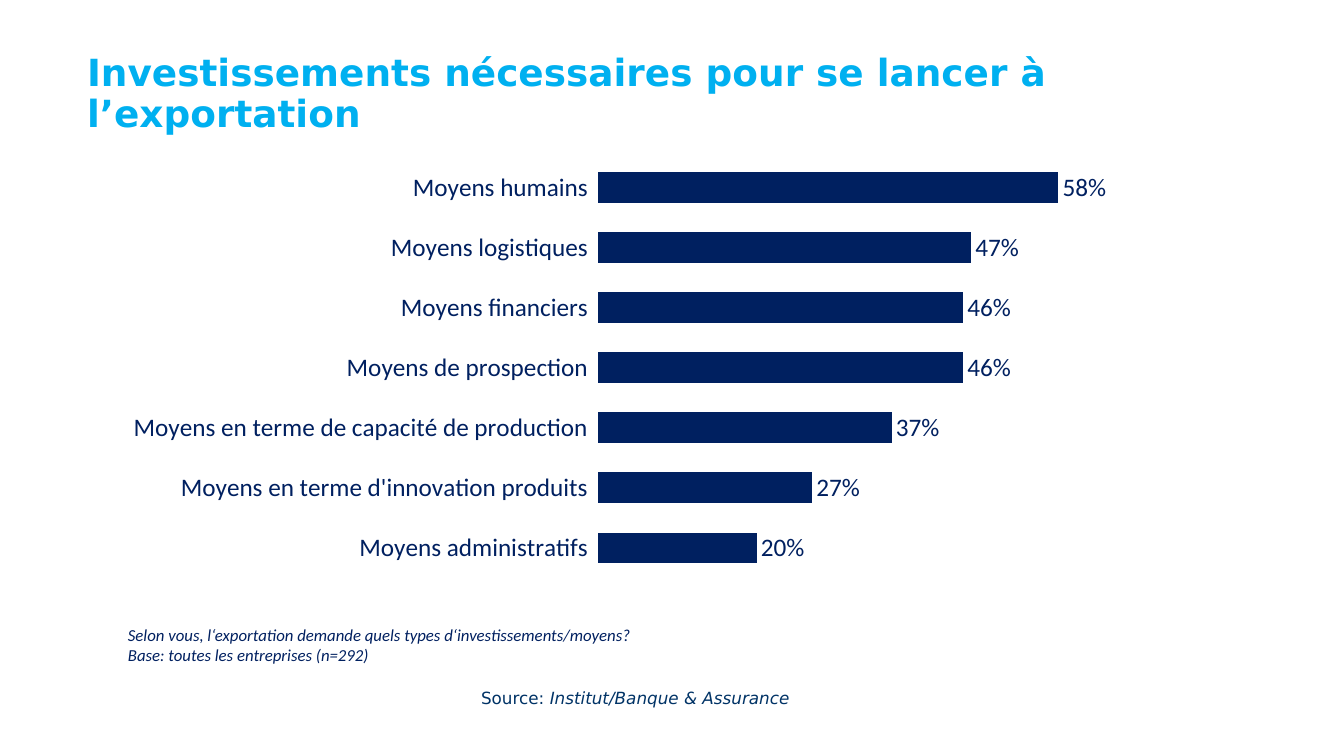
from lxml import etree
from pptx import Presentation
from pptx.chart.data import CategoryChartData
from pptx.dml.color import RGBColor
from pptx.enum.chart import XL_CHART_TYPE, XL_LABEL_POSITION, XL_TICK_LABEL_POSITION, XL_TICK_MARK
from pptx.enum.text import MSO_ANCHOR, MSO_AUTO_SIZE, PP_ALIGN
from pptx.oxml.ns import qn
from pptx.util import Pt

BAR_STACKED = XL_CHART_TYPE.BAR_STACKED
INSIDE_END = XL_LABEL_POSITION.INSIDE_END
LABELS_LOW = XL_TICK_LABEL_POSITION.LOW
NO_TICK = XL_TICK_MARK.NONE
MIDDLE, TOP = MSO_ANCHOR.MIDDLE, MSO_ANCHOR.TOP
NO_AUTOFIT = MSO_AUTO_SIZE.NONE
LEFT, CENTER = PP_ALIGN.LEFT, PP_ALIGN.CENTER

SKY = RGBColor(0x00, 0xB0, 0xF0)
NAVY = RGBColor(0x00, 0x20, 0x60)
SOURCE_BLUE = RGBColor(0x00, 0x33, 0x66)
HEADING_FONT, BODY_FONT = "DejaVu Sans", "Calibri"

# 100.8 px to the inch
EMU_PER_PX = 914400 / 100.8
SLIDE_SIZE = (1344, 756)
TITLE_BOX = (77, 55, 1267, 80)
CHART_BOX = (118, 147, 1057, 440)
PLOT_BOX = (480, 10, 556, 421)  # inside the chart
LABEL_SHIFT = 52  # moves each value past the end of its bar
QUESTION_BOX = (118, 620, 672, 50)
SOURCE_BOX = (284, 683, 703, 30)

INVESTMENTS = {
    "Moyens humains": 0.58,
    "Moyens logistiques": 0.47,
    "Moyens financiers": 0.46,
    "Moyens de prospection": 0.46,
    "Moyens en terme de capacité de production": 0.37,
    "Moyens en terme d'innovation produits": 0.27,
    "Moyens administratifs": 0.20,
}


def px(length):
    return round(length * EMU_PER_PX)


def add_run(paragraph, text, font_name, size, color, bold=False, italic=False):
    run = paragraph.add_run()
    run.text = text
    font = run.font
    font.name, font.size = font_name, Pt(size)
    font.bold, font.italic = bold, italic
    font.color.rgb = color


def add_title(slide, box):
    title = slide.shapes.title
    title.left, title.top, title.width, title.height = map(px, box)
    frame = title.text_frame
    frame.auto_size = NO_AUTOFIT
    frame.vertical_anchor = MIDDLE
    paragraph = frame.paragraphs[0]
    paragraph.alignment = LEFT
    paragraph.line_spacing = 0.9
    add_run(paragraph, "Investissements nécessaires pour se lancer à l’exportation",
            HEADING_FONT, 26.7, SKY, bold=True)


def add_text(slide, box, lines, font_name, color, alignment):
    """Each line is a list of (text, italic) runs."""
    frame = slide.shapes.add_textbox(*map(px, box)).text_frame
    frame.word_wrap = True
    frame.vertical_anchor = TOP
    for index, runs in enumerate(lines):
        paragraph = frame.add_paragraph() if index else frame.paragraphs[0]
        paragraph.alignment = alignment
        for text, italic in runs:
            add_run(paragraph, text, font_name, 12, color, italic=italic)


def manual_layout(**settings):
    layout = etree.Element(qn("c:layout"))
    manual = etree.SubElement(layout, qn("c:manualLayout"))
    for name, value in settings.items():
        etree.SubElement(manual, qn(f"c:{name}")).set("val", str(value))
    return layout


def place_plot(chart, chart_box, plot_box):
    left, top, width, height = plot_box
    chart_width, chart_height = chart_box[2:]
    plot_area = chart._chartSpace.chart.plotArea
    for layout in plot_area.findall(qn("c:layout")):
        plot_area.remove(layout)
    plot_area.insert(0, manual_layout(
        layoutTarget="inner", xMode="edge", yMode="edge",
        x=round(left / chart_width, 3), y=round(top / chart_height, 3),
        w=round(width / chart_width, 3), h=round(height / chart_height, 3)))


def add_investment_chart(slide, box):
    data = CategoryChartData(number_format="0%")
    data.categories = list(INVESTMENTS)
    data.add_series("Series 1", list(INVESTMENTS.values()))
    chart = slide.shapes.add_chart(BAR_STACKED, *map(px, box), data).chart
    chart.has_legend = chart.has_title = False
    chart.font.name, chart.font.size = BODY_FONT, Pt(18)
    chart.font.color.rgb = NAVY
    place_plot(chart, box, PLOT_BOX)

    # Axes
    categories = chart.category_axis
    categories.reverse_order = True
    categories.major_tick_mark = categories.minor_tick_mark = NO_TICK
    categories.tick_label_position = LABELS_LOW
    categories.format.line.fill.background()
    values = chart.value_axis
    values.minimum_scale, values.maximum_scale = 0, 0.7
    values.has_major_gridlines = False
    values.visible = False

    # Bars and values
    plot = chart.plots[0]
    plot.gap_width, plot.overlap = 95, 100
    plot.vary_by_categories = False
    series = plot.series[0]
    series.format.fill.solid()
    series.format.fill.fore_color.rgb = NAVY
    labels = series.data_labels
    labels.show_value = True
    labels.number_format, labels.number_format_is_linked = "0%", False
    labels.position = INSIDE_END
    for index in range(len(INVESTMENTS)):
        series.points[index].data_label.position = INSIDE_END
    for label in labels._element.findall(qn("c:dLbl")):
        label.insert(1, manual_layout(x=round(LABEL_SHIFT / box[2], 3), y=0))


def build_slide(presentation):
    slide = presentation.slides.add_slide(presentation.slide_layouts[5])
    add_title(slide, TITLE_BOX)
    add_text(slide, SOURCE_BOX,
             [[("Source: ", False), ("Institut/Banque & Assurance", True)]],
             HEADING_FONT, SOURCE_BLUE, CENTER)
    add_text(slide, QUESTION_BOX,
             [[("Selon vous, l‘exportation demande quels types d‘investissements/moyens?", True)],
              [("Base: toutes les entreprises (n=292)", True)]],
             BODY_FONT, NAVY, LEFT)
    add_investment_chart(slide, CHART_BOX)


def main():
    presentation = Presentation()
    presentation.slide_width, presentation.slide_height = map(px, SLIDE_SIZE)
    build_slide(presentation)
    presentation.save("out.pptx")


if __name__ == "__main__":
    main()
